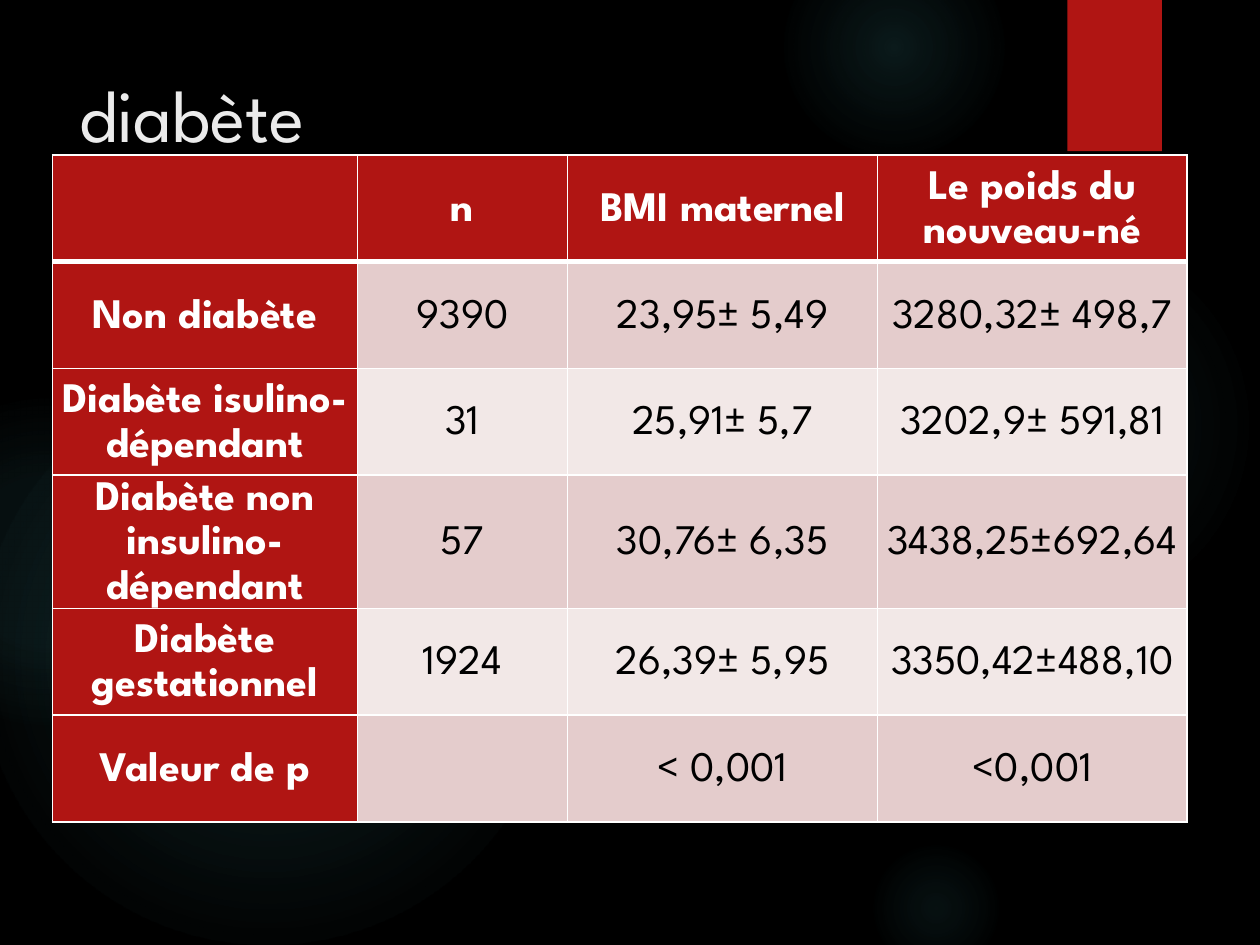
from pptx import Presentation
from pptx.dml.color import RGBColor
from pptx.enum.shapes import MSO_SHAPE
from pptx.enum.text import MSO_ANCHOR, PP_ALIGN
from pptx.oxml import parse_xml
from pptx.util import Pt

OVAL, RECT = MSO_SHAPE.OVAL, MSO_SHAPE.RECTANGLE
MIDDLE, BOTTOM = MSO_ANCHOR.MIDDLE, MSO_ANCHOR.BOTTOM
LEFT, CENTER = PP_ALIGN.LEFT, PP_ALIGN.CENTER

BLACK = RGBColor(0x00, 0x00, 0x00)
WHITE = RGBColor(0xFF, 0xFF, 0xFF)
LIGHT = RGBColor(0xEB, 0xEB, 0xEB)
RED = RGBColor(0xB0, 0x15, 0x13)
GLOW = RGBColor(0x50, 0xB9, 0xC1)
BANDS = (RGBColor(0xE4, 0xCC, 0xCC), RGBColor(0xF2, 0xE8, 0xE7))

NS = 'xmlns:a="http://schemas.openxmlformats.org/drawingml/2006/main"'

GLOWS = [
    (496, 132, 221.8, ((0, 7), (36, 6), (69, 0))),
    (448, -36, 126, ((0, 14), (36, 7), (73, 0))),
    (496, 480, 78, ((0, 9), (36, 5), (66, 0))),
    (-12, 210, 330, ((0, 11), (36, 10), (75, 0))),
    (-66, 228, 186, ((0, 8), (36, 8), (72, 0))),
]

ROWS = [
    ("", "n", "BMI maternel", "Le poids du nouveau-né"),
    ("Non diabète", "9390", "23,95± 5,49", "3280,32± 498,7"),
    ("Diabète isulino-dépendant", "31", "25,91± 5,7", "3202,9± 591,81"),
    ("Diabète non insulino-dépendant", "57", "30,76± 6,35", "3438,25±692,64"),
    ("Diabète gestationnel", "1924", "26,39± 5,95", "3350,42±488,10"),
    ("Valeur de p", "", "< 0,001", "<0,001"),
]


class Deck:
    font = "League Spartan"

    def __init__(self, prs):
        self.slide = prs.slides.add_slide(prs.slide_layouts[5])
        fill = self.slide.background.fill
        fill.solid()
        fill.fore_color.rgb = BLACK

    def shape(self, kind, x, y, w, h, color):
        sp = self.slide.shapes.add_shape(kind, Pt(x), Pt(y), Pt(w), Pt(h))
        sp.shadow.inherit = False
        sp.fill.solid()
        sp.fill.fore_color.rgb = color
        sp.line.fill.background()
        return sp

    def glow(self, x, y, d, stops):
        sp = self.shape(OVAL, x, y, d, d, GLOW)
        gs = "".join(
            f'<a:gs pos="{pos * 1000}"><a:srgbClr val="{GLOW}">'
            f'<a:alpha val="{alpha * 1000}"/></a:srgbClr></a:gs>'
            for pos, alpha in stops)
        grad = parse_xml(
            f'<a:gradFill {NS} rotWithShape="1"><a:gsLst>{gs}</a:gsLst>'
            '<a:path path="circle"><a:fillToRect l="50000" t="50000" '
            'r="50000" b="50000"/></a:path></a:gradFill>')
        solid = sp.fill._xPr.solidFill
        solid.getparent().replace(solid, grad)

    def text(self, p, text, size, color, bold=False, align=CENTER):
        p.alignment = align
        r = p.add_run()
        r.text = text
        r.font.name = self.font
        r.font.size = Pt(size)
        r.font.bold = bold
        r.font.color.rgb = color

    def title(self, text, x, y, w, h):
        sp = self.slide.shapes.title
        sp.left, sp.top, sp.width, sp.height = Pt(x), Pt(y), Pt(w), Pt(h)
        tf = sp.text_frame
        tf.vertical_anchor = BOTTOM
        tf.margin_bottom = 0
        self.text(tf.paragraphs[0], text, 42, LIGHT, align=LEFT)

    def borders(self, cell, widths):
        tc_pr = cell._tc.get_or_add_tcPr()
        for i, (side, width) in enumerate(zip("LRTB", widths)):
            tc_pr.insert(i, parse_xml(
                f'<a:ln{side} {NS} w="{Pt(width)}"><a:solidFill>'
                f'<a:srgbClr val="{WHITE}"/></a:solidFill></a:ln{side}>'))

    def cell(self, cell, text, i, j):
        head = i == 0 or j == 0
        cell.fill.solid()
        cell.fill.fore_color.rgb = RED if head else BANDS[(i - 1) % 2]
        cell.vertical_anchor = MIDDLE
        cell.margin_left = cell.margin_right = Pt(5)
        cell.margin_top = cell.margin_bottom = 0
        self.borders(cell, (1, 1, 3 if i == 1 else 1, 3 if i == 0 else 1))
        if text:
            p = cell.text_frame.paragraphs[0]
            p.line_spacing = 1.15
            self.text(p, text, 24, WHITE if head else BLACK, head)

    def table(self, rows, x, y, widths, height):
        tbl = self.slide.shapes.add_table(
            len(rows), len(widths), Pt(x), Pt(y),
            Pt(sum(widths)), Pt(height * len(rows))).table
        for col, width in zip(tbl.columns, widths):
            col.width = Pt(width)
        for i, row in enumerate(rows):
            tbl.rows[i].height = Pt(height)
            for j, text in enumerate(row):
                self.cell(tbl.cell(i, j), text, i, j)


def main():
    prs = Presentation()
    prs.slide_width, prs.slide_height = Pt(720), Pt(540)
    deck = Deck(prs)
    for glow in GLOWS:
        deck.glow(*glow)
    deck.shape(RECT, 610, 0, 54, 86.4, RED)
    deck.title("diabète", 38, 36, 556, 54)
    deck.table(ROWS, 30, 88.6, (174.2, 120.2, 177, 177), 61)
    prs.save("out.pptx")


if __name__ == "__main__":
    main()
